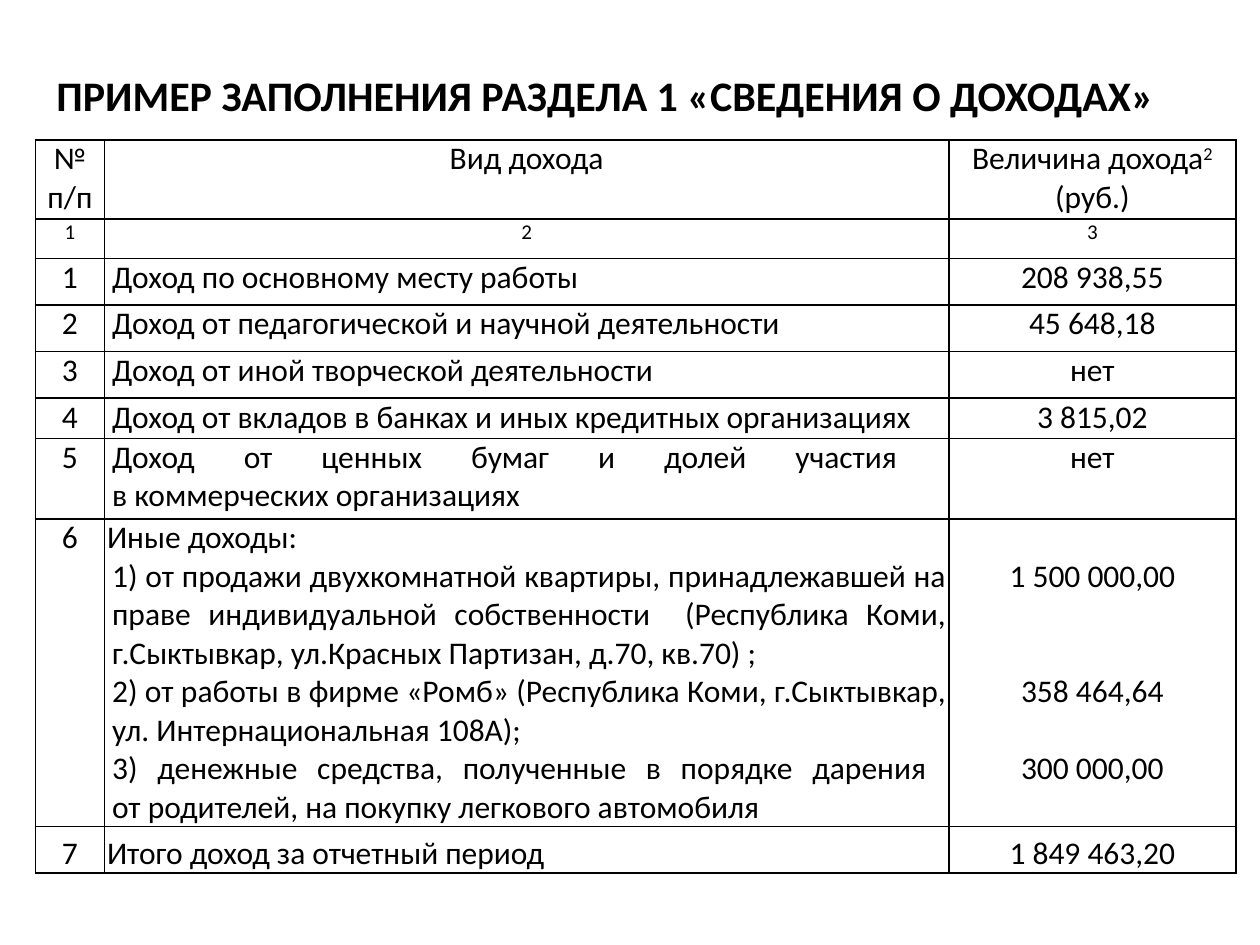
import pptx
import pptx.util
import pptx.dml.color
import pptx.enum.text
import pptx.oxml.ns
from lxml import etree

Inches, Pt = pptx.util.Inches, pptx.util.Pt
ALIGN = pptx.enum.text.PP_ALIGN
ANCHOR = pptx.enum.text.MSO_ANCHOR
qn = pptx.oxml.ns.qn

# Content
COLORS = {"ink": "000000", "paper": "FFFFFF"}
FONT = "Calibri"
TITLE = "ПРИМЕР ЗАПОЛНЕНИЯ РАЗДЕЛА 1 «СВЕДЕНИЯ О ДОХОДАХ»"
OTHER = [
    "Иные доходы:",
    "1) от продажи двухкомнатной квартиры, принадлежавшей на праве "
    "индивидуальной собственности  (Республика Коми, г.Сыктывкар, "
    "ул.Красных Партизан, д.70, кв.70) ; ",
    "2) от работы в фирме «Ромб» (Республика Коми, г.Сыктывкар, "
    "ул. Интернациональная 108А);",
    "3) денежные средства, полученные в порядке дарения \n"
    "от родителей, на покупку легкового автомобиля ",
]
SUMS = ["1 500 000,00", "358 464,64", "300 000,00"]
ROWS = [
    ("№\nп/п", "Вид дохода", "Величина дохода"),
    ("1", "2", "3"),
    ("1", "Доход по основному месту работы", "208 938,55"),
    ("2", "Доход от педагогической и научной деятельности", "45 648,18"),
    ("3", "Доход от иной творческой деятельности", "нет"),
    ("4", "Доход от вкладов в банках и иных кредитных организациях", "3 815,02"),
    ("5", "Доход от ценных бумаг и долей участия \nв коммерческих организациях", "нет"),
    ("6", OTHER, SUMS),
    ("7", "Итого доход за отчетный период", "1 849 463,20"),
]
WIDTHS = [0.55, 6.7, 2.28]
HEIGHTS = [0.63, 0.31, 0.37, 0.37, 0.37, 0.32, 0.64, 2.44, 0.37]
HEAD, NUMS, PAPERS, MIXED, TOTAL = 0, 1, 6, 7, 8
LINE = 22  # height of one 18 pt text line, in points
GAPS = [0, 2 * LINE, LINE]  # keeps each sum beside its item


def rgb(name):
    return pptx.dml.color.RGBColor.from_string(COLORS[name])


def style(par, size, bold=False):
    font = par.font
    font.name, font.size, font.bold = FONT, Pt(size), bold
    font.color.rgb = rgb("ink")


def border(cell):
    props = cell._tc.get_or_add_tcPr()
    for i, side in enumerate(("lnL", "lnR", "lnT", "lnB")):
        line = etree.Element(qn("a:" + side), w=str(Pt(1)))
        fill = etree.SubElement(line, qn("a:solidFill"))
        etree.SubElement(fill, qn("a:srgbClr"), val=COLORS["ink"])
        props.insert(i, line)


def write(cell, texts, row, col):
    cell.margin_left = cell.margin_right = Inches(0.02)
    cell.margin_top = cell.margin_bottom = 0
    cell.vertical_anchor = ANCHOR.BOTTOM if row == TOTAL else ANCHOR.TOP
    frame = cell.text_frame
    for i, text in enumerate(texts):
        par = frame.paragraphs[0] if i == 0 else frame.add_paragraph()
        par.text = text
        style(par, 12 if row == NUMS else 18)
        if col != 1 or row <= NUMS:
            par.alignment = ALIGN.CENTER
            continue
        par.alignment = ALIGN.JUSTIFY if row in (PAPERS, MIXED) else ALIGN.LEFT
        if row != TOTAL and (row != MIXED or i > 0):
            props = par._p.get_or_add_pPr()
            props.set("marL", str(Inches(0.04)))
            props.set("indent", "0")


deck = pptx.Presentation()
deck.slide_width, deck.slide_height = Inches(10), Inches(7.5)
slide = deck.slides.add_slide(deck.slide_layouts[6])

# Title
box = slide.shapes.add_textbox(Inches(0.35), Inches(0.4), Inches(9.53), Inches(0.75))
frame = box.text_frame
frame.word_wrap = True
frame.vertical_anchor = ANCHOR.MIDDLE
par = frame.paragraphs[0]
par.text = TITLE
par.line_spacing = 0.9
style(par, 24, True)

# Income table
table = slide.shapes.add_table(
    len(ROWS), len(WIDTHS), Inches(0.28), Inches(1.11),
    Inches(sum(WIDTHS)), Inches(sum(HEIGHTS))).table
table.first_row = table.horz_banding = False
for col, width in zip(table.columns, WIDTHS):
    col.width = Inches(width)
for r, (row, height) in enumerate(zip(ROWS, HEIGHTS)):
    table.rows[r].height = Inches(height)
    for c, item in enumerate(row):
        cell = table.cell(r, c)
        write(cell, [item] if isinstance(item, str) else item, r, c)
        cell.fill.solid()
        cell.fill.fore_color.rgb = rgb("paper")
        border(cell)

# Footnote mark in the last heading
par = table.cell(HEAD, 2).text_frame.paragraphs[0]
mark = par.add_run()
mark.text = "2"
mark.font._element.set("baseline", "30000")
par.add_line_break()
par.add_run().text = "(руб.)"

# Sums line up with their items
cell = table.cell(MIXED, 2)
cell.margin_top = Pt(LINE)
for par, gap in zip(cell.text_frame.paragraphs, GAPS):
    par.space_before = Pt(gap)

deck.save("out.pptx")
